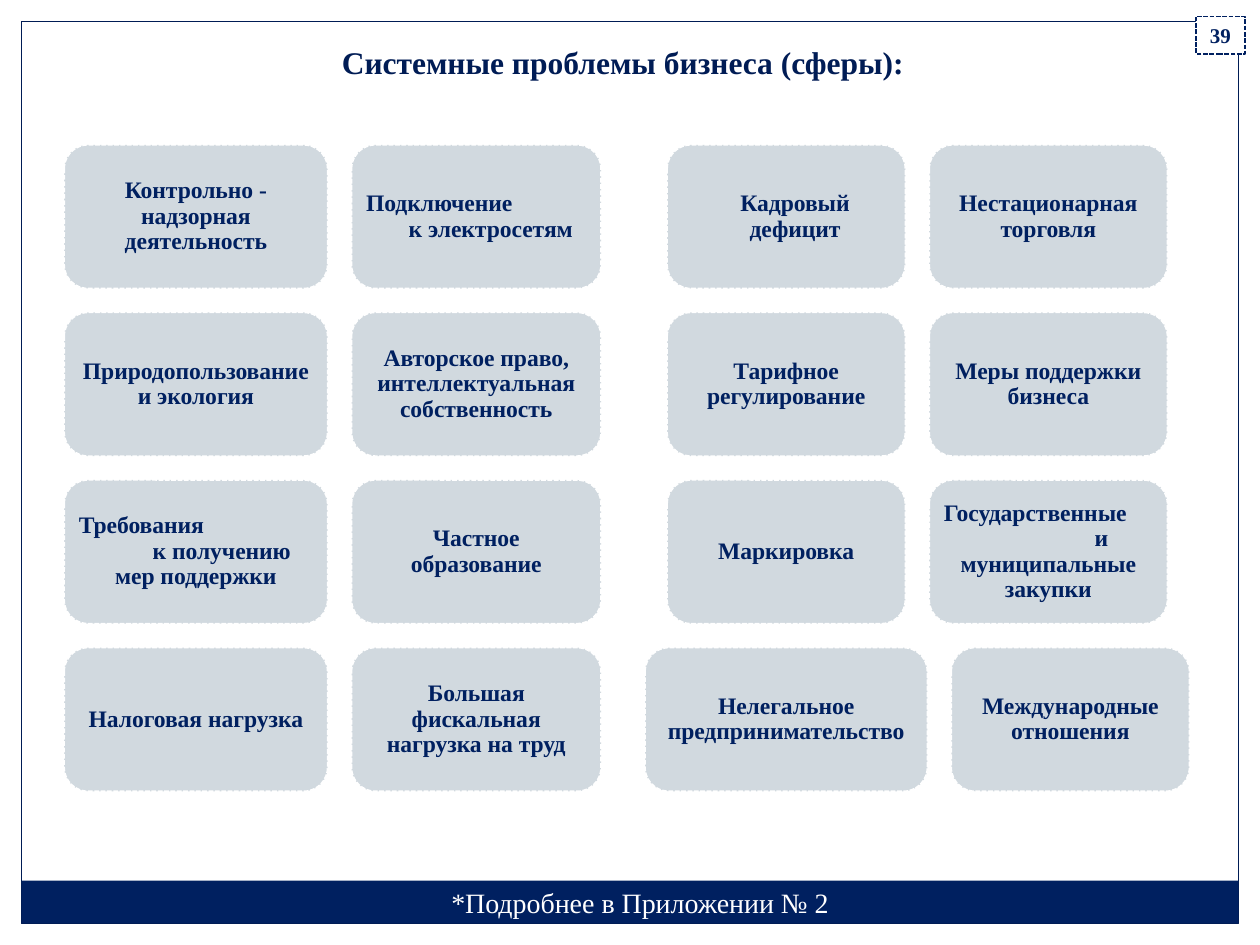
"""Build the slide that lists the spheres of systemic business problems."""
from collections import namedtuple
from dataclasses import dataclass

from pptx import Presentation
from pptx.dml.color import RGBColor
from pptx.enum import dml, shapes, text
from pptx import util as u


@dataclass(frozen=True)
class Theme:
    """Colours, type sizes and line widths of the slide."""
    font: str = "Times New Roman"
    navy: str = "002060"
    deep: str = "001C55"
    card: str = "D1D9DF"
    white: str = "FFFFFF"
    title: float = 18
    footer: float = 16
    label: float = 13.5
    number: float = 12
    frame_width: float = 0.75
    dash_width: float = 0.9


THEME = Theme()
WIDTH, HEIGHT = 10, 7.5
TOP, CARD_HEIGHT, GAP = 1.15, 1.14, 0.19
ROW_PITCH = CARD_HEIGHT + GAP
PAD = 0.06
CENTER, LEFT = text.PP_ALIGN.CENTER, text.PP_ALIGN.LEFT

Line = namedtuple("Line", "words align indent", defaults=(CENTER, 0))
Group = namedtuple("Group", "center rows")
Card = namedtuple("Card", "width lines left_pad", defaults=(PAD,))


def column(width, *labels):
    """Return cards of one width, each label being a string or a list of lines."""
    return [Card(width, [Line(label)] if isinstance(label, str) else label)
            for label in labels]


LEFT_GROUP = Group(2.64, list(zip(
    column(2.09, "Контрольно - надзорная деятельность",
           "Природопользование и экология",
           [Line("Требования", LEFT), Line("к получению", indent=0.41),
            Line("мер поддержки")],
           "Налоговая нагрузка"),
    column(1.98, [Line("Подключение", LEFT), Line("к электросетям", indent=0.23)],
           "Авторское право, интеллектуальная собственность",
           "Частное образование",
           "Большая фискальная нагрузка на труд"))))

RIGHT_GROUP = Group(7.28, list(zip(
    [Card(1.89, [Line("Кадровый дефицит")], 0.2),
     *column(1.89, "Тарифное регулирование", "Маркировка"),
     *column(2.24, "Нелегальное предпринимательство")],
    column(1.89, "Нестационарная торговля", "Меры поддержки бизнеса",
           [Line("Государственные", LEFT), Line("и", indent=0.84),
            Line("муниципальные закупки")],
           "Международные отношения"))))


def apply(target, values):
    """Set each attribute of the target from a dict."""
    for name, value in values.items():
        setattr(target, name, value)


def write(shape, lines, size, color, bold=True, spacing=1.0, **frame_values):
    """Write lines of text into a shape."""
    frame = shape.text_frame
    apply(frame, {"word_wrap": True, "vertical_anchor": text.MSO_ANCHOR.TOP,
                  **frame_values})
    for index, line in enumerate(lines):
        para = frame.add_paragraph() if index else frame.paragraphs[0]
        apply(para, {"alignment": line.align, "line_spacing": spacing})
        if line.indent:
            para._p.get_or_add_pPr().set("marL", str(u.Inches(line.indent)))
        span = para.add_run()
        span.text = line.words
        apply(span.font, {"name": THEME.font, "size": u.Pt(size), "bold": bold})
        span.font.color.rgb = RGBColor.from_string(color)


def add_box(page, kind, place, fill=None, line=None, width=0, dash=None):
    """Add a preset shape with the given fill and outline."""
    box = page.shapes.add_shape(kind, *map(u.Inches, place))
    box.shadow.inherit = False
    if fill:
        box.fill.solid()
        box.fill.fore_color.rgb = RGBColor.from_string(fill)
    else:
        box.fill.background()
    if line:
        box.line.color.rgb = RGBColor.from_string(line)
        apply(box.line, {"width": u.Pt(width), "dash_style": dash})
    else:
        box.line.fill.background()
    return box


def add_text(page, place, words, size, color, **values):
    """Add a text box with one centred line."""
    box = page.shapes.add_textbox(*map(u.Inches, place))
    write(box, [Line(words)], size, color, **values)


def add_cards(page, group):
    """Add the rows of a group, each row centred on the group's axis."""
    for row, cards in enumerate(group.rows):
        total = sum(card.width for card in cards) + GAP * (len(cards) - 1)
        left = group.center - total / 2
        for card in cards:
            place = (left, TOP + row * ROW_PITCH, card.width, CARD_HEIGHT)
            box = add_box(page, shapes.MSO_SHAPE.ROUNDED_RECTANGLE, place,
                          THEME.card, THEME.white, THEME.dash_width,
                          dml.MSO_LINE.SQUARE_DOT)
            pad = u.Inches(PAD)
            write(box, card.lines, THEME.label, THEME.navy, spacing=0.9,
                  vertical_anchor=text.MSO_ANCHOR.MIDDLE,
                  margin_left=u.Inches(card.left_pad), margin_right=pad,
                  margin_top=pad, margin_bottom=pad)
            left += card.width + GAP


def add_frame(page):
    """Add the footer bar and the outline around the slide."""
    edge = 0.17
    inner = WIDTH - 2 * edge
    rectangle = shapes.MSO_SHAPE.RECTANGLE
    add_box(page, rectangle, (edge, 6.99, inner, 0.34), THEME.navy)
    add_box(page, rectangle, (edge, edge, inner, HEIGHT - 2 * edge),
            line=THEME.deep, width=THEME.frame_width)


def add_number(page, number):
    """Add the dashed page number box in the corner."""
    box = add_box(page, shapes.MSO_SHAPE.RECTANGLE, (9.49, 0.13, 0.39, 0.3),
                  THEME.white, THEME.navy, THEME.dash_width,
                  dml.MSO_LINE.SQUARE_DOT)
    write(box, [Line(number)], THEME.number, THEME.navy)


def main():
    """Build and save the deck."""
    deck = Presentation()
    apply(deck, {"slide_width": u.Inches(WIDTH), "slide_height": u.Inches(HEIGHT)})
    page = deck.slides.add_slide(deck.slide_layouts[6])
    add_frame(page)
    add_cards(page, LEFT_GROUP)
    add_text(page, (2.61, 0.29, 4.67, 0.4), "Системные проблемы бизнеса (сферы):",
             THEME.title, THEME.deep, word_wrap=False)
    add_text(page, (1.3, 6.98, 7.56, 0.37), "*Подробнее в Приложении № 2",
             THEME.footer, THEME.white, bold=False)
    add_cards(page, RIGHT_GROUP)
    add_number(page, "39")
    deck.save("out.pptx")


if __name__ == "__main__":
    main()
